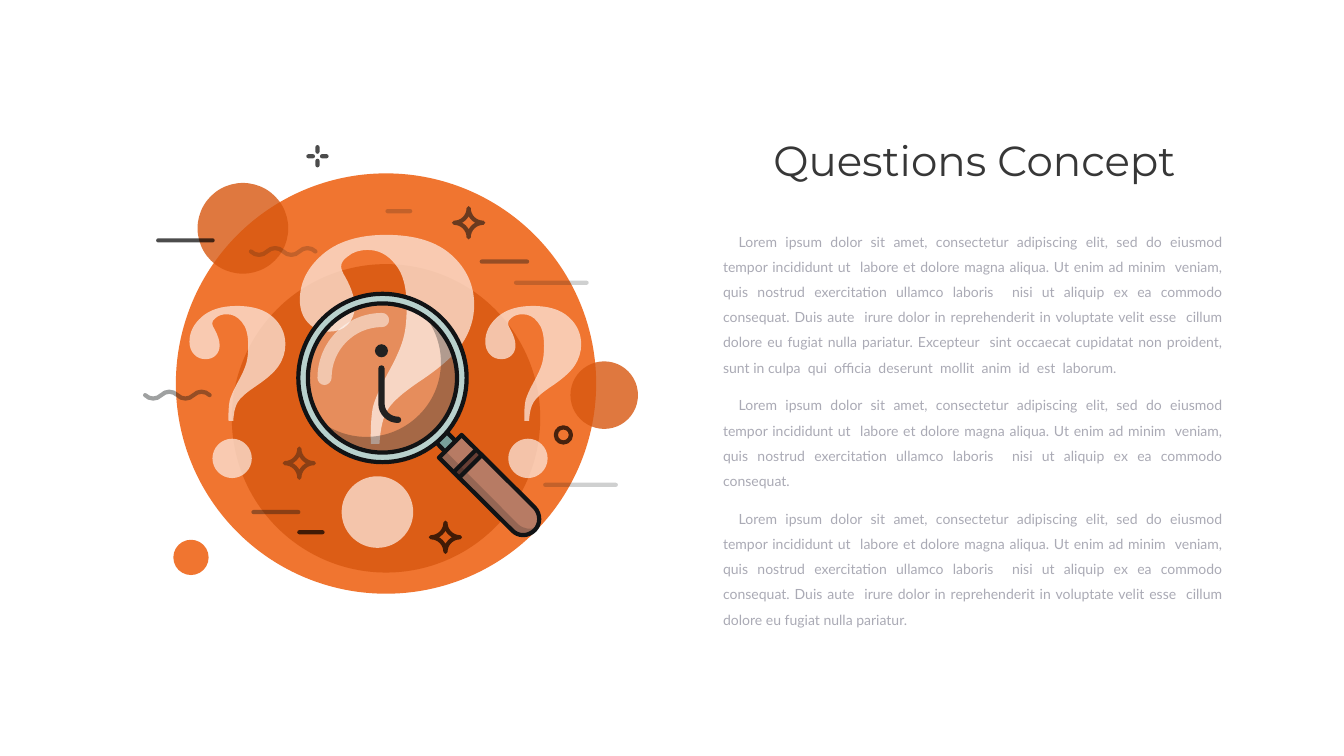
from pptx import Presentation
from pptx.dml.color import RGBColor
from pptx.enum.shapes import MSO_CONNECTOR, MSO_SHAPE
from pptx.enum.text import MSO_AUTO_SIZE, PP_ALIGN
from pptx.oxml.ns import qn
from pptx.util import Inches, Pt
from lxml import etree

OVAL, DONUT, STRAIGHT = MSO_SHAPE.OVAL, MSO_SHAPE.DONUT, MSO_CONNECTOR.STRAIGHT
CENTER, JUSTIFY = PP_ALIGN.CENTER, PP_ALIGN.JUSTIFY
FIT_SHAPE = MSO_AUTO_SIZE.SHAPE_TO_FIT_TEXT

ORANGE, RUST, CREAM = "F07530", "D75710", "FCE3D6"
BLACK, DARK, INK, LETTER = "000000", "111415", "111315", "212121"

TITLE = "Questions Concept"
OPENING = ("Lorem ipsum dolor sit amet, consectetur adipiscing elit, sed do eiusmod tempor "
           "incididunt ut  labore et dolore magna aliqua. Ut enim ad minim  veniam, quis nostrud "
           "exercitation ullamco laboris  nisi ut aliquip ex ea commodo consequat.")
MIDDLE = (" Duis aute  irure dolor in reprehenderit in voluptate velit esse  cillum dolore eu "
          "fugiat nulla pariatur.")
ENDING = (" Excepteur  sint occaecat cupidatat non proident, sunt in culpa  qui  officia  "
          "deserunt  mollit  anim  id  est  laborum.")
BODY = [OPENING + MIDDLE + ENDING, OPENING, OPENING + MIDDLE]

# centre x, centre y, radius, colour, opacity
DISCS = [(7.66, 7.61, 4.17, ORANGE, 100), (7.66, 8.3, 3.06, RUST, 80),
         (4.82, 4.53, 0.9, RUST, 80), (11.99, 7.84, 0.67, RUST, 80),
         (3.79, 11.06, 0.35, ORANGE, 100)]
# left, y, length, colour, opacity
DASHES = [(5.03, 10.16, 0.89, DARK, 40), (9.56, 5.19, 0.9, DARK, 40),
          (7.69, 4.19, 0.45, DARK, 20), (5.94, 10.56, 0.46, BLACK, 70),
          (3.14, 4.77, 1.08, BLACK, 70), (10.24, 5.61, 1.4, DARK, 20),
          (10.82, 9.62, 1.4, DARK, 20)]
WAVES = [(2.88, 7.84, 40), (4.98, 4.99, 20)]
SPARKLES = [(5.94, 9.19, DARK, 40), (9.3, 4.42, DARK, 60), (8.84, 10.66, BLACK, 70)]
# left, top, scale, opacity
QUESTION_MARKS = [(5.95, 4.66, 1, 78), (9.63, 6.07, 0.55, 77), (3.76, 6.07, 0.55, 78)]

# A contour is a start point, then pairs for straight parts and sixes for Bezier curves.
WAVE = [(0, 0)] + [(0.32 * i + 0.09, s, 0.32 * i + 0.23, s, 0.32 * i + 0.32, 0)
                   for i, s in enumerate((0.09, -0.09, 0.09, -0.09))]
SPARKLE = [(0, 0.29), (0, 0.13, -0.13, 0, -0.29, 0), (-0.13, 0, 0, -0.13, 0, -0.29),
           (0, -0.13, 0.13, 0, 0.29, 0), (0.13, 0, 0, 0.13, 0, 0.29)]
QUESTION_DOT = [(1.54, 4.79), (1.93, 4.79, 2.25, 5.11, 2.25, 5.5), (2.25, 5.89, 1.93, 6.21, 1.54, 6.21),
                (1.15, 6.21, 0.83, 5.89, 0.83, 5.5), (0.83, 5.11, 1.15, 4.79, 1.54, 4.79)]
QUESTION_HOOK = [
    (1.58, 4.15), (1.41, 4.15), (1.4, 3.83, 1.42, 3.58, 1.45, 3.42), (1.49, 3.26, 1.59, 3.04, 1.74, 2.76),
    (1.9, 2.47, 2, 2.25, 2.05, 2.07), (2.1, 1.9, 2.12, 1.69, 2.12, 1.44),
    (2.12, 1.05, 2.05, 0.76, 1.89, 0.58), (1.74, 0.39, 1.56, 0.3, 1.35, 0.3),
    (1.19, 0.3, 1.05, 0.34, 0.95, 0.43), (0.86, 0.49, 0.82, 0.56, 0.82, 0.63),
    (0.82, 0.68, 0.85, 0.75, 0.91, 0.85), (1.03, 1.07, 1.09, 1.26, 1.09, 1.42),
    (1.09, 1.56, 1.05, 1.68, 0.95, 1.78), (0.85, 1.88, 0.73, 1.92, 0.58, 1.92),
    (0.42, 1.92, 0.28, 1.87, 0.17, 1.75), (0.06, 1.64, 0, 1.48, 0, 1.29),
    (0, 0.95, 0.15, 0.65, 0.45, 0.39), (0.75, 0.13, 1.17, 0, 1.71, 0),
    (2.28, 0, 2.71, 0.13, 3.01, 0.4), (3.31, 0.67, 3.46, 1, 3.46, 1.39),
    (3.46, 1.66, 3.38, 1.92, 3.22, 2.16), (3.07, 2.39, 2.77, 2.65, 2.33, 2.94),
    (2.04, 3.14, 1.84, 3.31, 1.75, 3.46), (1.65, 3.61, 1.6, 3.84, 1.58, 4.15)]
GRIP_SIDE = [(8.71, 9.08), (10.16, 10.52), (10.28, 10.65, 10.48, 10.65, 10.61, 10.52)]
GRIP = GRIP_SIDE + [(10.73, 10.4, 10.73, 10.2, 10.61, 10.07), (9.16, 8.63)]
GRIP_SHADE = GRIP_SIDE + [(10.63, 10.5, 10.65, 10.48, 10.66, 10.45),
                          (10.54, 10.52, 10.39, 10.5, 10.28, 10.4), (8.84, 8.95), (9.16, 8.63)]
BAND = [(9.56, 9.03), (9.11, 9.48), (9, 9.37), (9.45, 8.92)]
NECK = [(8.83, 8.96), (8.67, 8.8), (8.88, 8.59), (9.04, 8.75)]
NECK_EDGES = [(8.66, 8.78, 8.83, 8.96), (8.86, 8.57, 9.04, 8.75)]
BAND_EDGES = [(9, 9.37, 9.45, 8.92), (9.11, 9.48, 9.56, 9.03)]
GLINT = [(6.58, 7.5), (6.58, 6.94, 7.03, 6.49, 7.58, 6.49), (7.66, 6.49, 7.72, 6.43, 7.72, 6.35),
         (7.72, 6.27, 7.66, 6.21, 7.58, 6.21), (6.87, 6.21, 6.3, 6.79, 6.3, 7.5),
         (6.3, 7.57, 6.36, 7.64, 6.44, 7.64), (6.51, 7.64, 6.58, 7.57, 6.58, 7.5)]
LENS_SHADE = [(8.63, 6.45), (8.57, 6.4, 8.52, 6.35, 8.46, 6.31), (8.89, 6.89, 8.84, 7.71, 8.32, 8.23),
              (7.79, 8.76, 6.97, 8.81, 6.39, 8.38), (6.44, 8.43, 6.48, 8.49, 6.54, 8.54),
              (7.11, 9.12, 8.05, 9.12, 8.63, 8.54), (9.2, 7.96, 9.2, 7.03, 8.63, 6.45)]
LETTER_STEM = [(7.9, 8.33), (7.72, 8.33, 7.57, 8.19, 7.57, 8.01), (7.57, 7.31)]
LENS_X, LENS_Y = 7.59, 7.5


def set_color(fill, color, alpha=100):
    fill.solid()
    fill.fore_color.rgb = RGBColor.from_string(color)
    if alpha < 100:
        node = fill._xPr.find(".//" + qn("a:srgbClr"))
        etree.SubElement(node, qn("a:alpha")).set("val", str(alpha * 1000))


def set_line(line, color, alpha=100, width=6):
    line.width = Pt(width)
    set_color(line.fill, color, alpha)
    outline = line._get_or_add_ln()
    outline.set("cap", "rnd")
    etree.SubElement(outline, qn("a:round"))


def paint(shape, fill=None, line=None):
    """Apply (colour, opacity) to the fill and (colour, opacity, width) to the line."""
    shape.shadow.inherit = False
    if fill:
        set_color(shape.fill, *fill)
    else:
        shape.fill.background()
    if line:
        set_line(shape.line, *line)
    else:
        shape.line.fill.background()


def add_circle(shapes, x, y, radius, kind=OVAL, **style):
    circle = shapes.add_shape(kind, Inches(x - radius), Inches(y - radius),
                              Inches(2 * radius), Inches(2 * radius))
    paint(circle, **style)
    return circle


def add_stroke(shapes, x1, y1, x2, y2, *style):
    connector = shapes.add_connector(STRAIGHT, Inches(x1), Inches(y1), Inches(x2), Inches(y2))
    set_line(connector.line, *style)
    etree.SubElement(connector._element.spPr, qn("a:effectLst"))


def bend(shape, parts):
    """Join each three segments that stand for a Bezier part into one curve."""
    segments = iter(list(shape._element.iter(qn("a:lnTo"))))
    for part in parts:
        first = next(segments)
        if len(part) == 6:
            first.tag = qn("a:cubicBezTo")
            for _ in range(2):
                segment = next(segments)
                first.append(segment[0])
                segment.getparent().remove(segment)


def add_outline(shapes, contours, x=0, y=0, scale=1, closed=True, **style):
    builder = None
    for contour in contours:
        points = [(Inches(x + scale * part[i]), Inches(y + scale * part[i + 1]))
                  for part in contour for i in range(0, len(part), 2)]
        if builder is None:
            builder = shapes.build_freeform(*points[0], scale=1.0)
        else:
            builder.move_to(*points[0])
        builder.add_line_segments(points[1:], close=closed)
    shape = builder.convert_to_shape()
    bend(shape, [part for contour in contours for part in contour[1:]])
    paint(shape, **style)


def add_text(shapes, box, texts, font, size, color, align):
    frame = shapes.add_textbox(*map(Inches, box)).text_frame
    frame.word_wrap = True
    frame.auto_size = FIT_SHAPE
    for index, text in enumerate(texts):
        paragraph = frame.paragraphs[0] if index == 0 else frame.add_paragraph()
        paragraph.alignment = align
        run = paragraph.add_run()
        run.text = text
        run.font.name, run.font.size = font, Pt(size)
        run.font.color.rgb = RGBColor.from_string(color)
    return frame


presentation = Presentation()
presentation.slide_width, presentation.slide_height = Inches(26.67), Inches(15)
slide = presentation.slides.add_slide(presentation.slide_layouts[6])
shapes = slide.shapes

for x, y, radius, color, alpha in DISCS:
    add_circle(shapes, x, y, radius, fill=(color, alpha))

add_text(shapes, (14.2, 2.62, 10.27, 1.11), [TITLE], "Montserrat", 60, "373737", CENTER)
body = add_text(shapes, (14.25, 4.41, 10.11, 7.67), BODY, "Lato", 20, "AAAAB5", JUSTIFY)
for paragraph in body.paragraphs:
    paragraph.line_spacing = 1.5
    paragraph.space_before = Pt(18)
    paragraph._p.get_or_add_pPr().set("indent", str(Inches(0.31)))

plus = shapes.add_group_shape().shapes
for dx, dy in ((0, -1), (-1, 0), (0, 1), (1, 0)):
    add_stroke(plus, 6.3 + 0.09 * dx, 3.1 + 0.09 * dy, 6.3 + 0.18 * dx, 3.1 + 0.18 * dy, BLACK, 70)
for x, y, alpha in WAVES:
    add_outline(shapes, [WAVE], x, y, closed=False, line=(DARK, alpha))
for x, y, length, color, alpha in DASHES:
    add_stroke(shapes, x, y, x + length, y, color, alpha)
for x, y, color, alpha in SPARKLES:
    add_outline(shapes, [SPARKLE], x, y, line=(color, alpha))
add_circle(shapes, 11.18, 8.63, 0.15, line=(BLACK, 70))
for x, y, scale, alpha in QUESTION_MARKS:
    add_outline(shapes, [QUESTION_DOT, QUESTION_HOOK], x, y, scale, fill=(CREAM, alpha))

handle = shapes.add_group_shape().shapes
for contour, fill in ((GRIP, ("B77B64",)), (BAND, ("683E34",)), (GRIP_SHADE, (DARK, 20)),
                      (NECK, ("789F9A",))):
    add_outline(handle, [contour], fill=fill)
for edge in NECK_EDGES:
    add_stroke(handle, *edge, INK)
add_outline(handle, [GRIP], line=(INK,))
for edge in BAND_EDGES:
    add_stroke(handle, *edge, INK)

lens = shapes.add_group_shape().shapes
add_circle(lens, LENS_X, LENS_Y, 1.47, fill=("FFFFFF", 30))
rim = add_circle(lens, LENS_X, LENS_Y, 1.67, DONUT, fill=("B8D1CD",))
rim.adjustments[0] = 0.06
add_outline(lens, [GLINT], fill=("FFFFFF", 50))
add_outline(lens, [LENS_SHADE], fill=(DARK, 30))
for radius in (1.67, 1.48):
    add_circle(lens, LENS_X, LENS_Y, radius, line=(INK,))

letter = shapes.add_group_shape().shapes
add_outline(letter, [LETTER_STEM], closed=False, line=(LETTER, 100, 9))
add_circle(letter, 7.57, 6.96, 0.13, fill=(LETTER,))

presentation.save("out.pptx")
